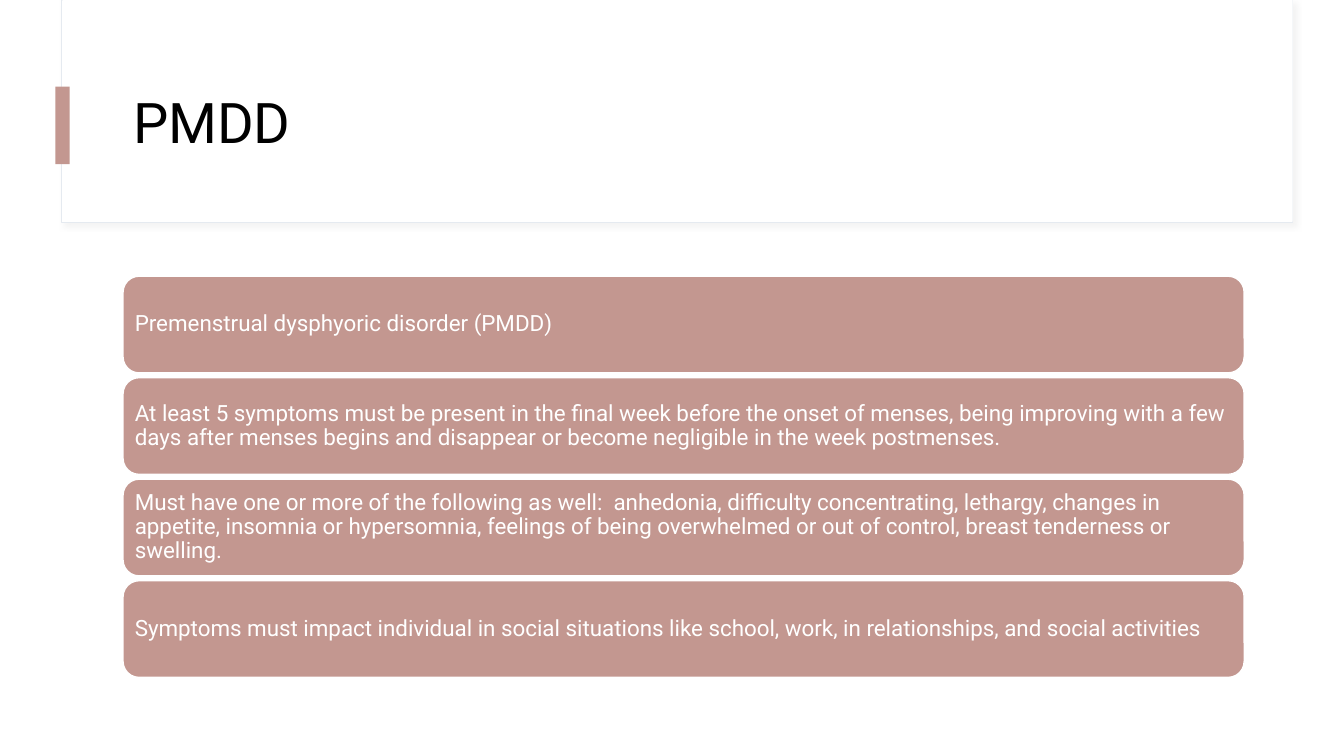
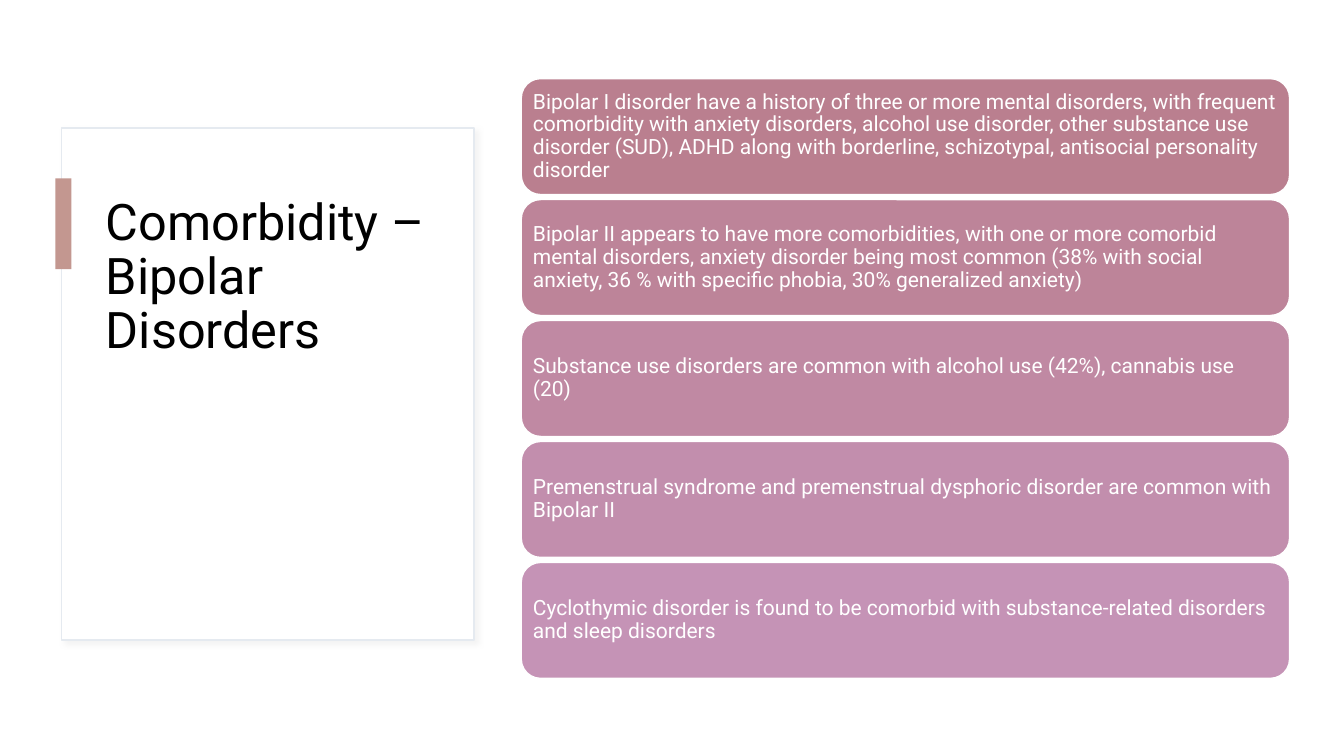
from dataclasses import dataclass
from typing import Optional

from lxml import etree
from pptx import Presentation
from pptx import util as u
from pptx.dml.color import RGBColor
from pptx.enum import shapes, text
from pptx.oxml import ns

FONT = "Roboto"
COLORS = {
    "white": "FFFFFF",
    "black": "000000",
    "border": "E5EAF0",
    "shadow": "D9D9D9",
    "accent": "C39790",
}
FADE = ["BA7F8F", "BD8499", "C089A3", "C28EAD", "C593B6"]


@dataclass
class Box:
    left: float
    top: float
    width: float
    height: float

    def lengths(self) -> list:
        return [u.Inches(n) for n in (self.left, self.top, self.width, self.height)]


@dataclass
class Header:
    title: str
    title_box: Box
    size: int
    anchor: text.MSO_ANCHOR
    frame: Box
    border: float
    accent: Box
    cover: Optional[Box] = None


@dataclass
class CardStack:
    first: Box
    pitch: float
    size: int
    margin: float
    fills: list
    texts: list


def write(shape, content: str, *, size: int, color: str, anchor, margin: float) -> None:
    frame = shape.text_frame
    frame.word_wrap = True
    frame.auto_size = text.MSO_AUTO_SIZE.NONE
    frame.vertical_anchor = anchor
    frame.margin_left = frame.margin_right = u.Inches(margin)
    frame.margin_top = frame.margin_bottom = u.Inches(min(margin, 0.07))
    paragraph = frame.paragraphs[0]
    paragraph.alignment = text.PP_ALIGN.LEFT
    paragraph.line_spacing = 0.9
    run = paragraph.add_run()
    run.text = content
    run.font.name = FONT
    run.font.size = u.Pt(size)
    run.font.color.rgb = RGBColor.from_string(color)


def add_box(slide, box: Box, fill: str, *, line: str = "", width: float = 1,
            kind=shapes.MSO_SHAPE.RECTANGLE):
    shape = slide.shapes.add_shape(kind, *box.lengths())
    shape.shadow.inherit = False
    shape.fill.solid()
    shape.fill.fore_color.rgb = RGBColor.from_string(fill)
    if line:
        shape.line.color.rgb = RGBColor.from_string(line)
        shape.line.width = u.Pt(width)
    else:
        shape.line.fill.background()
    return shape


def add_soft_shadow(shape) -> None:
    effects = shape._element.spPr.find(ns.qn("a:effectLst"))
    shadow = etree.SubElement(
        effects, ns.qn("a:outerShdw"), blurRad=str(u.Pt(4)), dist=str(u.Pt(3)),
        dir=str(45 * 60000), algn="tl", rotWithShape="0")
    color = etree.SubElement(shadow, ns.qn("a:srgbClr"), val=COLORS["shadow"])
    etree.SubElement(color, ns.qn("a:alpha"), val="30000")


def add_header(slide, header: Header) -> None:
    frame = add_box(slide, header.frame, COLORS["white"],
                    line=COLORS["border"], width=header.border)
    add_soft_shadow(frame)
    if header.cover:
        add_box(slide, header.cover, COLORS["white"])
    add_box(slide, header.accent, COLORS["accent"])
    title = slide.shapes.title
    title.left, title.top, title.width, title.height = header.title_box.lengths()
    write(title, header.title, size=header.size, color=COLORS["black"],
          anchor=header.anchor, margin=0.1)
    # The title has to lie in front of its frame.
    slide.shapes._spTree.append(title._element)


def add_cards(slide, stack: CardStack) -> None:
    first = stack.first
    for index, (fill, content) in enumerate(zip(stack.fills, stack.texts)):
        box = Box(first.left, first.top + index * stack.pitch, first.width, first.height)
        card = add_box(slide, box, fill, line=COLORS["white"],
                       kind=shapes.MSO_SHAPE.ROUNDED_RECTANGLE)
        write(card, content, size=stack.size, color=COLORS["white"],
              anchor=text.MSO_ANCHOR.MIDDLE, margin=stack.margin)


SLIDES = [
    (
        Header("PMDD", Box(1.22, 0.6, 11.12, 1.29), 40, text.MSO_ANCHOR.MIDDLE,
               frame=Box(0.61, 0, 12.21, 2.21), border=0.75,
               accent=Box(0.55, 0.86, 0.14, 0.77), cover=Box(0.62, 0, 12.2, 2.2)),
        CardStack(Box(1.22, 2.74, 11.12, 0.96), 1.007, 16, 0.07, [COLORS["accent"]] * 4, [
            "Premenstrual dysphyoric disorder (PMDD)",
            "At least 5 symptoms must be present in the final week before the onset of "
            "menses, being improving with a few days after menses begins and disappear or "
            "become negligible in the week postmenses.",
            "Must have one or more of the following as well:  anhedonia, difficulty "
            "concentrating, lethargy, changes in appetite, insomnia or hypersomnia, feelings "
            "of being overwhelmed or out of control, breast tenderness or swelling.",
            "Symptoms must impact individual in social situations like school, work, in "
            "relationships, and social activities",
        ]),
    ),
    (
        Header("Comorbidity – Bipolar Disorders", Box(0.95, 1.88, 3.39, 3.85), 36,
               text.MSO_ANCHOR.TOP, frame=Box(0.61, 1.27, 4.09, 5.08), border=1,
               accent=Box(0.55, 1.77, 0.16, 0.9)),
        CardStack(Box(5.17, 0.78, 7.62, 1.15), 1.2, 15, 0.06, FADE, [
            "Bipolar I disorder have a history of three or more mental disorders, with "
            "frequent comorbidity with anxiety disorders, alcohol use disorder, other "
            "substance use disorder (SUD), ADHD along with borderline, schizotypal, "
            "antisocial personality disorder",
            "Bipolar II appears to have more comorbidities, with one or more comorbid mental "
            "disorders, anxiety disorder being most common (38% with social anxiety, 36 % "
            "with specific phobia, 30% generalized anxiety)",
            "Substance use disorders are common with alcohol use (42%), cannabis use (20)",
            "Premenstrual syndrome and premenstrual dysphoric disorder are common with "
            "Bipolar II",
            "Cyclothymic disorder is found to be comorbid with substance-related disorders "
            "and sleep disorders",
        ]),
    ),
]


def main() -> None:
    presentation = Presentation()
    presentation.slide_width = u.Inches(13.33)
    presentation.slide_height = u.Inches(7.5)
    title_only = presentation.slide_layouts[5]
    for header, stack in SLIDES:
        slide = presentation.slides.add_slide(title_only)
        add_header(slide, header)
        add_cards(slide, stack)
    presentation.save("out.pptx")


if __name__ == "__main__":
    main()
